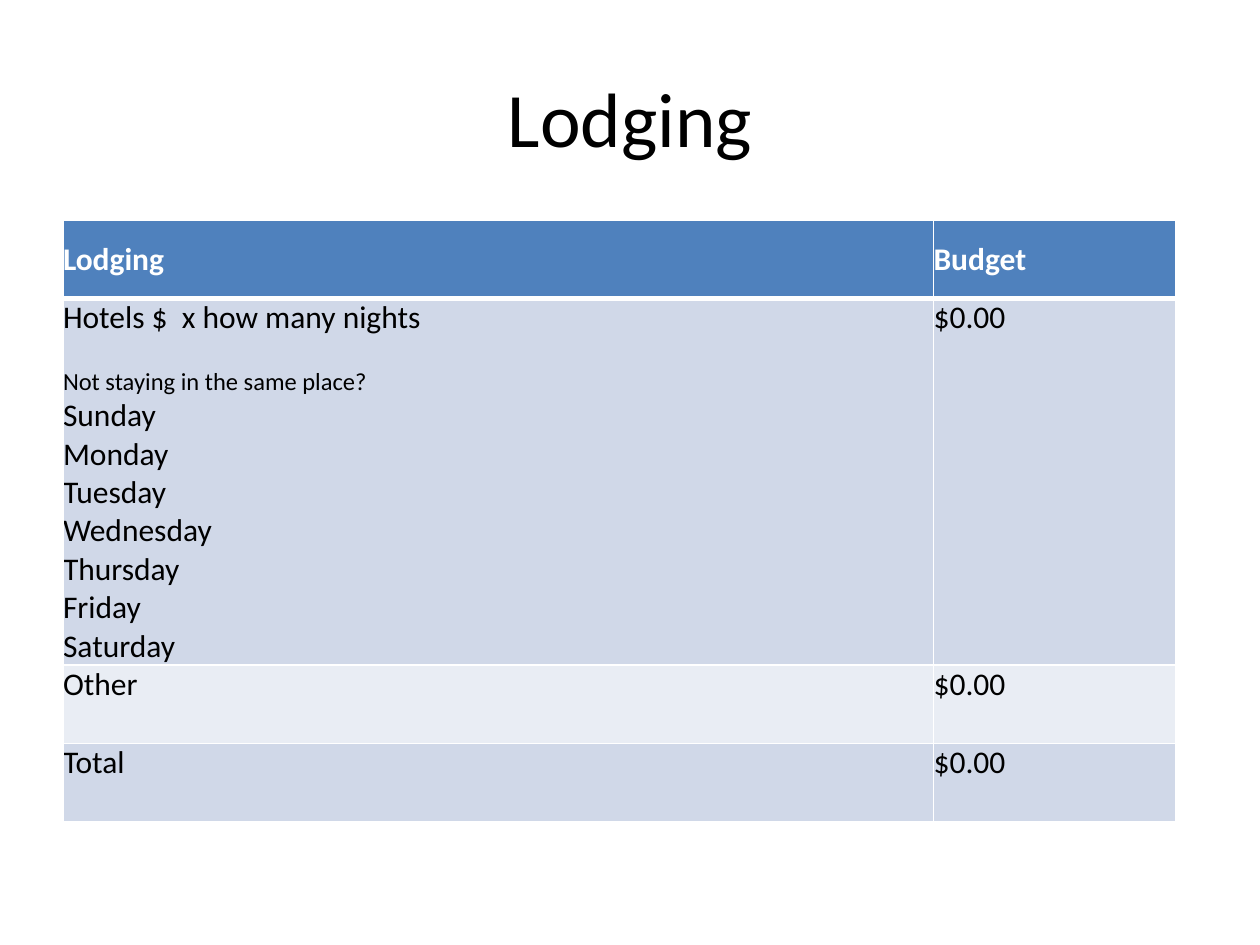
from lxml.etree import SubElement
from pptx import Presentation
from pptx.dml.color import RGBColor as RGB
from pptx.enum.text import MSO_ANCHOR as Anchor, PP_ALIGN as Align
from pptx.oxml.ns import qn
from pptx.util import Inches, Pt

# Content
TITLE = "Lodging"
NOTE = "Not staying in the same place?"
DAYS = ["Sunday", "Monday", "Tuesday", "Wednesday", "Thursday", "Friday", "Saturday"]
BUDGET = [
    (["Lodging"], ["Budget"]),
    (["Hotels $  x how many nights", NOTE, *DAYS], ["$0.00"]),
    (["Other"], ["$0.00"]),
    (["Total"], ["$0.00"]),
]

THEME = {
    "font": "Calibri", "title": 44, "body": 18, "note": 14, "note_gap": 17,
    "ink": "000000", "header_ink": "FFFFFF", "header": "4F81BD",
    "bands": ["D0D8E8", "E9EDF4"], "rule": "FFFFFF", "thin": 1, "thick": 3,
}
COLUMN_WIDTHS = [6.91, 1.92]
ROW_HEIGHTS = [0.62, 2.91, 0.62, 0.62]


def write(frame, lines, size, ink, bold=False, align=Align.LEFT):
    for index, line in enumerate(lines):
        paragraph = frame.paragraphs[0] if index == 0 else frame.add_paragraph()
        paragraph.alignment = align
        is_note = line == NOTE
        if is_note:
            paragraph.space_before = Pt(THEME["note_gap"])
        run = paragraph.add_run()
        run.text = line
        style = {"name": THEME["font"], "bold": bold,
                 "size": Pt(THEME["note"] if is_note else size)}
        for key, value in style.items():
            setattr(run.font, key, value)
        run.font.color.rgb = RGB.from_string(ink)


def set_borders(cell, widths):
    properties = cell._tc.get_or_add_tcPr()
    for position, (side, width) in enumerate(widths.items()):
        line = SubElement(properties, qn(f"a:ln{side}"), w=str(Pt(width)))
        fill = SubElement(line, qn("a:solidFill"))
        SubElement(fill, qn("a:srgbClr"), val=THEME["rule"])
        properties.insert(position, line)


deck = Presentation()
deck.slide_width, deck.slide_height = Inches(10), Inches(7.5)
slide = deck.slides.add_slide(deck.slide_layouts[6])

# Title
title = slide.shapes.add_textbox(Inches(0.5), Inches(0.3), Inches(9), Inches(1.25)).text_frame
title.word_wrap = True
title.vertical_anchor = Anchor.MIDDLE
write(title, [TITLE], THEME["title"], THEME["ink"], align=Align.CENTER)

# Budget table
budget = slide.shapes.add_table(
    len(BUDGET), len(COLUMN_WIDTHS), Inches(0.5), Inches(1.75),
    Inches(sum(COLUMN_WIDTHS)), Inches(sum(ROW_HEIGHTS))).table
for column, width in zip(budget.columns, COLUMN_WIDTHS):
    column.width = Inches(width)
for row, height in zip(budget.rows, ROW_HEIGHTS):
    row.height = Inches(height)

for r, entries in enumerate(BUDGET):
    is_header = r == 0
    shade = THEME["header"] if is_header else THEME["bands"][(r - 1) % 2]
    ink = THEME["header_ink"] if is_header else THEME["ink"]
    borders = dict.fromkeys("LRTB", THEME["thin"])
    if r < 2:  # heavy rule between header and body
        borders["B" if is_header else "T"] = THEME["thick"]
    cell_format = {
        "margin_left": 0, "margin_right": 0, "margin_top": 0, "margin_bottom": 0,
        "vertical_anchor": Anchor.MIDDLE if is_header else Anchor.TOP,
    }
    for c, lines in enumerate(entries):
        cell = budget.cell(r, c)
        for key, value in cell_format.items():
            setattr(cell, key, value)
        cell.fill.solid()
        cell.fill.fore_color.rgb = RGB.from_string(shade)
        set_borders(cell, borders)
        write(cell.text_frame, lines, THEME["body"], ink, bold=is_header)

deck.save("out.pptx")
